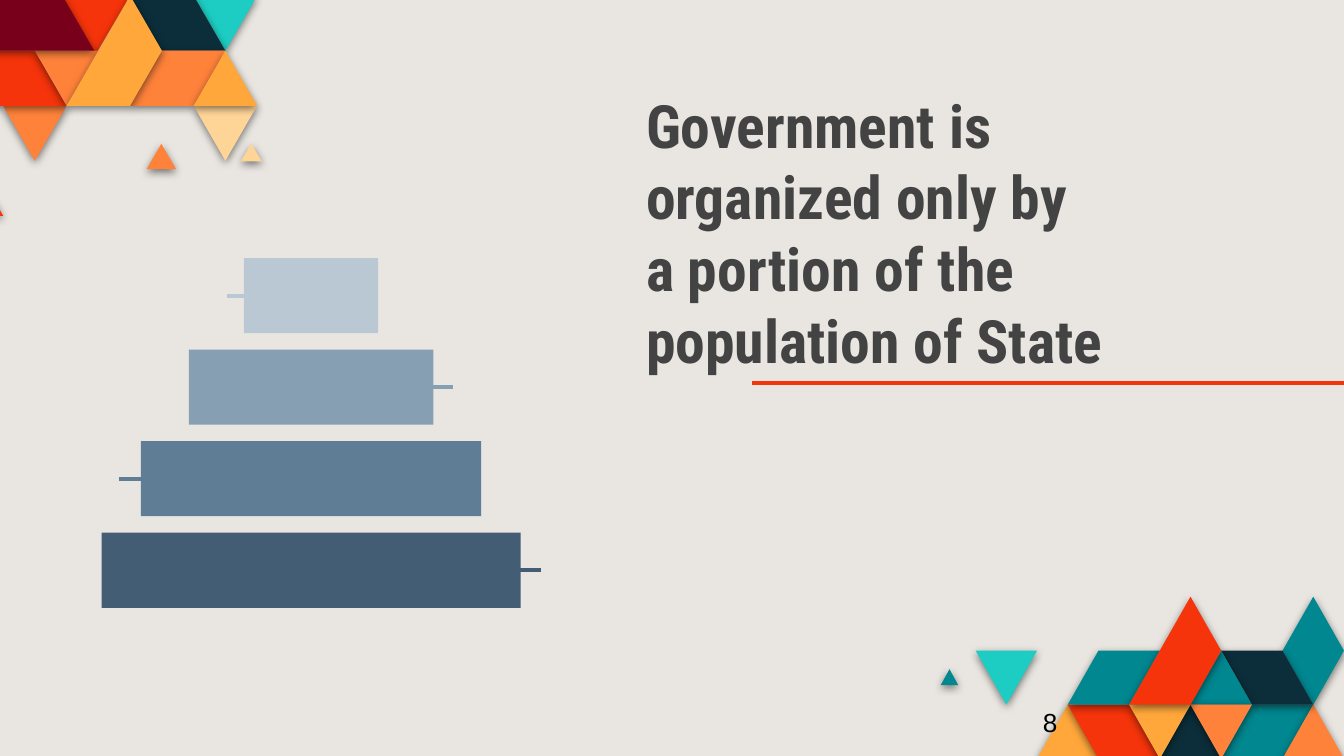
import pptx
import pptx.dml.color
import pptx.enum.shapes
import pptx.enum.text
import pptx.oxml
import pptx.oxml.ns
import pptx.util
from lxml import etree
from pptx.util import Cm

RED, ORANGE, AMBER, SAND = "F5340B", "FF823B", "FFA73B", "FFD497"
WINE, NAVY, TEAL, AQUA = "78001B", "0C2E3A", "018790", "1DCDC3"

SHADOW = (
    '<a:effectLst %s><a:outerShdw blurRad="57150" dist="19050" dir="5400000" '
    'algn="bl" rotWithShape="0"><a:srgbClr val="000000"><a:alpha val="50000"/>'
    "</a:srgbClr></a:outerShdw></a:effectLst>" % pptx.oxml.ns.nsdecls("a")
)

# Tile corners as (column, row) on a triangular grid, back to front.
TOP_TILES = [
    (RED, [(3.8, 0), (6, 0), (4.9, 1.07)]),
    (AQUA, [(8, 0), (10, 0), (9, 1)]),
    (NAVY, [(6, 0), (8, 0), (9, 1), (7, 1)]),
    (SAND, [(8, 2), (10, 2), (9, 3)]),
    (ORANGE, [(7, 1), (9, 1), (8, 2), (6, 2)]),
    (AMBER, [(9, 1), (10, 2), (8, 2)]),
    (ORANGE, [(2, 2), (4, 2), (3, 3)]),
    (RED, [(0, 4), (1, 3), (2, 4)]),
    (RED, [(0, 2), (1, 1), (3, 1), (4, 2)]),
    (ORANGE, [(3, 1), (5, 1), (4, 2)]),
    (WINE, [(0.87, 1), (1.87, 0), (3.87, 0), (4.87, 1)]),
    (AMBER, [(4, 2), (6, 0), (7, 1), (6, 2)]),
]
LOW_TILES = [
    (AMBER, [(0, 3), (1, 2), (2, 3)]),
    (RED, [(1, 2), (3, 2), (4, 3), (2, 3)]),
    (TEAL, [(6, 3), (7, 2), (9, 2), (8, 3)]),
    (ORANGE, [(8, 3), (9, 2), (10, 3)]),
    (NAVY, [(4, 3), (5, 2), (6, 3)]),
    (TEAL, [(1, 2), (2, 1), (4, 1), (3, 2)]),
    (AQUA, [(-2, 1), (0, 1), (-1, 2)]),
    (TEAL, [(8, 1), (9, 0), (10, 1), (9, 2)]),
    (NAVY, [(6, 1), (8, 1), (9, 2), (7, 2)]),
    (TEAL, [(5, 2), (6, 1), (7, 2)]),
    (ORANGE, [(5, 2), (7, 2), (6, 3)]),
    (AMBER, [(3, 2), (5, 2), (4, 3)]),
    (RED, [(3, 2), (5, 0), (6, 1), (5, 2)]),
]
# Loose triangles: colour, left, top, width, height in cm.
CHIPS = [
    (ORANGE, 2.77, 2.72, 0.56, 0.48),
    (SAND, 4.55, 2.72, 0.4, 0.33),
    (TEAL, 17.78, 12.65, 0.33, 0.3),
]
# Pyramid bars from the top: colour, width, left end of the tick in cm.
BARS = [
    ("BAC8D3", 2.54, 4.29),
    ("869FB2", 4.62, 7.67),
    ("5F7D95", 6.43, 2.24),
    ("435D74", 7.92, 9.32),
]


def color(code):
    return pptx.dml.color.RGBColor.from_string(code)


class Deck:
    def __init__(self):
        self.prs = pptx.Presentation()
        self.prs.slide_width, self.prs.slide_height = Cm(25.4), Cm(14.29)
        self.page = self.prs.slides.add_slide(self.prs.slide_layouts[6])
        back = self.page.background.fill
        back.solid()
        back.fore_color.rgb = color("E9E6E1")

    def paint(self, shape, code):
        shape.fill.solid()
        shape.fill.fore_color.rgb = color(code)
        shape.line.fill.background()

    def tile(self, code, spots):
        """Draw a closed outline with a soft shadow; spots are in cm."""
        spots = [(Cm(x), Cm(y)) for x, y in spots]
        pen = self.page.shapes.build_freeform(*spots[0])
        pen.add_line_segments(spots[1:], close=True)
        shape = pen.convert_to_shape()
        self.paint(shape, code)
        shape._element.spPr.append(pptx.oxml.parse_xml(SHADOW))

    def mesh(self, tiles, left, top, col, row):
        """Draw tiles whose corners sit on a grid of col by row cm."""
        for code, spots in tiles:
            self.tile(code, [(left + x * col, top + y * row) for x, y in spots])

    def bar(self, code, left, top, width, height):
        kind = pptx.enum.shapes.MSO_SHAPE.RECTANGLE
        shape = self.page.shapes.add_shape(
            kind, Cm(left), Cm(top), Cm(width), Cm(height))
        shape.shadow.inherit = False
        self.paint(shape, code)

    def rule(self, code, left, right, y):
        kind = pptx.enum.shapes.MSO_CONNECTOR.STRAIGHT
        line = self.page.shapes.add_connector(
            kind, Cm(left), Cm(y), Cm(right), Cm(y))
        line.line.color.rgb = color(code)
        line.line.width = pptx.util.Pt(2.25)
        etree.SubElement(line._element.spPr, pptx.oxml.ns.qn("a:effectLst"))

    def text(self, words, place, font, size, code, bold=False, anchor="TOP"):
        box = self.page.shapes.add_textbox(*[Cm(n) for n in place])
        frame = box.text_frame
        frame.word_wrap = True
        frame.vertical_anchor = pptx.enum.text.MSO_ANCHOR[anchor]
        frame.margin_left = frame.margin_right = Cm(0.25)
        frame.margin_top = frame.margin_bottom = Cm(0.25 if bold else 0.13)
        run = frame.paragraphs[0].add_run()
        run.text = words
        run.font.name = font
        run.font.size = pptx.util.Pt(size)
        run.font.bold = bold
        run.font.color.rgb = color(code)


def main():
    deck = Deck()
    deck.mesh(LOW_TILES, 19.6, 11.28, 0.58, 1.02)
    deck.mesh(TOP_TILES, -1.14, -0.08, 0.6, 1.04)
    for code, left, top, width, height in CHIPS:
        base = top + height
        deck.tile(code, [(left, base), (left + width / 2, top),
                         (left + width, base)])
    deck.rule(RED, 14.22, 25.4, 7.24)
    deck.text("Government is organized only by a portion of the population "
              "of State", (11.96, 5.74, 9.15, 1.6), "Roboto Condensed", 32,
              "434343", bold=True, anchor="BOTTOM")

    mid, height = 5.88, 1.42
    for i, (code, width, tick) in enumerate(BARS):
        top = 4.88 + i * 1.73
        deck.bar(code, mid - width / 2, top, width, height)
        deck.rule(code, tick, tick + 0.9, top + height / 2)

    deck.text("8", (19.46, 13.23, 0.9, 0.86), "Arial", 14, "000000")
    deck.prs.save("out.pptx")


if __name__ == "__main__":
    main()
